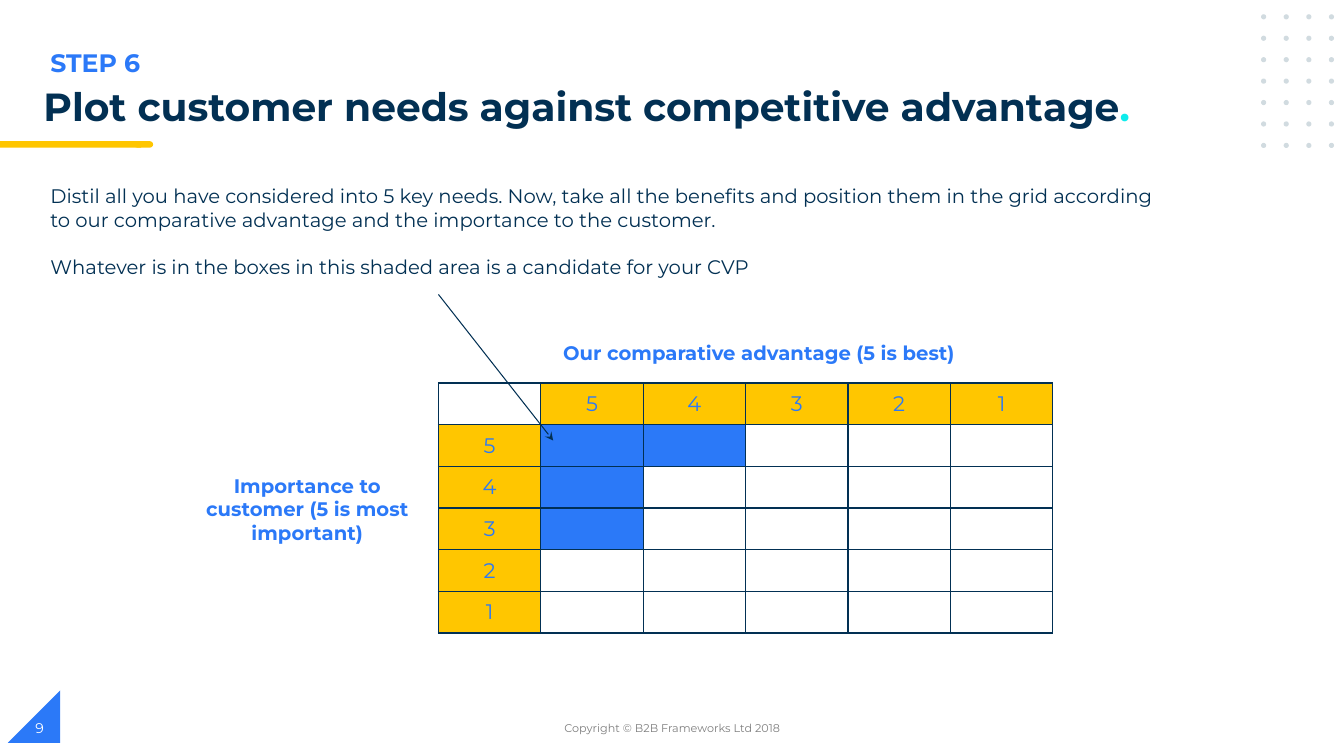
from dataclasses import dataclass
from itertools import product

from lxml.etree import SubElement
from pptx import Presentation
from pptx.dml.color import RGBColor
from pptx.enum.shapes import MSO_CONNECTOR as Link, MSO_SHAPE as Shape
from pptx.enum.text import MSO_ANCHOR as Anchor, MSO_AUTO_SIZE as AutoSize, PP_ALIGN as Align
from pptx.oxml.ns import qn
from pptx.util import Cm, Pt


@dataclass(frozen=True)
class Theme:
    """Colours, font and type sizes of the slide."""
    navy: RGBColor = RGBColor(0x02, 0x30, 0x53)
    blue: RGBColor = RGBColor(0x2B, 0x79, 0xF8)
    yellow: RGBColor = RGBColor(0xFF, 0xC6, 0x00)
    cyan: RGBColor = RGBColor(0x0E, 0xEC, 0xEC)
    dot: RGBColor = RGBColor(0xD1, 0xDB, 0xE0)
    grey: RGBColor = RGBColor(0x7F, 0x7F, 0x7F)
    white: RGBColor = RGBColor(0xFF, 0xFF, 0xFF)
    font: str = "Montserrat"
    title: int = 28
    step: int = 18
    score: int = 15
    body: int = 14
    number: int = 10
    footer: int = 8


THEME = Theme()
SCORES = (5, 4, 3, 2, 1)
CANDIDATES = {(1, 1), (1, 2), (2, 1), (3, 1)}


def add_span(para, text, size, color, bold=False):
    """Append a formatted run to a paragraph."""
    span = para.add_run()
    span.text = text
    span.font.name = THEME.font
    span.font.size = Pt(size)
    span.font.bold = bold
    span.font.color.rgb = color


def write(frame, *texts, size=THEME.body, color=THEME.navy, bold=False,
          align=Align.LEFT, anchor=Anchor.TOP, gap=0, spacing=None):
    """Fill a text frame with one paragraph per text."""
    frame.word_wrap = True
    frame.vertical_anchor = anchor
    for index, text in enumerate(texts):
        para = frame.add_paragraph() if index else frame.paragraphs[0]
        para.alignment = align
        para.line_spacing = spacing
        para.space_before = Pt(gap if index else 0)
        add_span(para, text, size, color, bold)


def add_text(page, left, top, width, height, *texts, **style):
    """Add a text box, placed in centimetres."""
    box = page.shapes.add_textbox(Cm(left), Cm(top), Cm(width), Cm(height))
    write(box.text_frame, *texts, **style)


def add_plain(page, preset, left, top, width, height, color):
    """Add a flat shape without outline, placed in centimetres."""
    shape = page.shapes.add_shape(preset, Cm(left), Cm(top), Cm(width), Cm(height))
    shape.shadow.inherit = False
    shape.fill.solid()
    shape.fill.fore_color.rgb = color
    shape.line.fill.background()
    return shape


def add_decor(page):
    """Draw the corner triangle, the title bar and the dot pattern."""
    corner = add_plain(page, Shape.RIGHT_TRIANGLE, 0.2, 17.4, 1.32, 1.32, THEME.blue)
    corner._element.spPr.get_or_add_xfrm().set("flipH", "1")
    add_plain(page, Shape.FLOWCHART_TERMINATOR, 3.38, 3.56, 0.48, 0.16, THEME.yellow)
    add_plain(page, Shape.RECTANGLE, -0.02, 3.56, 3.58, 0.16, THEME.yellow)
    for row, column in product(range(7), range(4)):
        add_plain(page, Shape.OVAL, 31.78 + 0.57 * column, 0.36 + 0.54 * row,
                  0.13, 0.13, THEME.dot)


def add_title(page):
    """Place and format the title with its coloured full stop."""
    title = page.shapes.title
    title.left, title.top, title.width, title.height = Cm(0.84), Cm(2.08), Cm(30.61), Cm(1.42)
    frame = title.text_frame
    frame.auto_size = AutoSize.NONE
    write(frame, "Plot customer needs against competitive advantage",
          size=THEME.title, bold=True, spacing=0.9)
    add_span(frame.paragraphs[0], ".", THEME.title, THEME.cyan, True)


def add_borders(cell):
    """Give a cell thin navy lines on all four sides."""
    properties = cell._tc.get_or_add_tcPr()
    for side in ("lnL", "lnR", "lnT", "lnB"):
        line = SubElement(properties, qn(f"a:{side}"), w=str(Pt(1)))
        fill = SubElement(line, qn("a:solidFill"))
        SubElement(fill, qn("a:srgbClr"), val=str(THEME.navy))


def add_grid(page):
    """Add the scoring table with its shaded candidate cells."""
    count = len(SCORES) + 1
    table = page.shapes.add_table(count, count, Cm(11.05), Cm(9.65),
                                  Cm(15.48), Cm(6.3)).table
    table.first_row = table.horz_banding = False
    for column in table.columns:
        column.width = Cm(2.58)
    for row in table.rows:
        row.height = Cm(1.05)
    for row, column in product(range(count), repeat=2):
        cell = table.cell(row, column)
        cell.margin_left = cell.margin_right = Cm(0.33)
        add_borders(cell)
        is_header = (row == 0) != (column == 0)
        if is_header:
            write_score(cell, SCORES[max(row, column) - 1])
        if is_header or (row, column) in CANDIDATES:
            cell.fill.solid()
            cell.fill.fore_color.rgb = THEME.yellow if is_header else THEME.blue
        else:
            cell.fill.background()
        cell.text_frame.paragraphs[0].font.size = Pt(THEME.score)


def write_score(cell, score):
    """Write a centred score in a header cell."""
    cell.vertical_anchor = Anchor.MIDDLE
    para = cell.text_frame.paragraphs[0]
    para.alignment = Align.CENTER
    add_span(para, str(score), THEME.score, THEME.blue)


def add_arrow(page, left, top, right, bottom):
    """Draw a thin line with a stealth arrowhead at its end."""
    arrow = page.shapes.add_connector(Link.STRAIGHT, Cm(left), Cm(top), Cm(right), Cm(bottom))
    arrow.line.color.rgb = THEME.navy
    arrow.line.width = Pt(0.75)
    SubElement(arrow.line._get_or_add_ln(), qn("a:tailEnd"), type="stealth")
    SubElement(arrow._element.spPr, qn("a:effectLst"))


def main():
    """Build and save the slide."""
    deck = Presentation()
    deck.slide_width, deck.slide_height = Cm(33.87), Cm(19.05)
    page = deck.slides.add_slide(deck.slide_layouts[5])
    add_decor(page)
    add_title(page)
    add_grid(page)
    label = dict(color=THEME.blue, bold=True)
    add_text(page, 13.94, 8.46, 11.73, 0.86, "Our comparative advantage (5 is best)", **label)
    add_text(page, 4.8, 11.81, 5.89, 2.06, "Importance to customer (5 is most important)",
             align=Align.CENTER, **label)
    add_text(page, 1.02, 4.52, 28.83, 3.33,
             "Distil all you have considered into 5 key needs. Now, take all the benefits and "
             "position them in the grid according to our comparative advantage and the "
             "importance to the customer.",
             "Whatever is in the boxes in this shaded area is a candidate for your CVP", gap=17)
    add_arrow(page, 11.05, 7.42, 13.94, 11.1)
    add_text(page, 11.23, 17.83, 11.43, 1.02, "Copyright © B2B Frameworks Ltd 2018",
             size=THEME.footer, color=THEME.grey, align=Align.CENTER, anchor=Anchor.MIDDLE)
    add_text(page, 0.64, 17.83, 7.62, 1.02, "9", size=THEME.number, color=THEME.white,
             anchor=Anchor.MIDDLE)
    add_text(page, 1.02, 1.07, 3.53, 1.02, "STEP 6", size=THEME.step, **label)
    deck.save("out.pptx")


if __name__ == "__main__":
    main()
